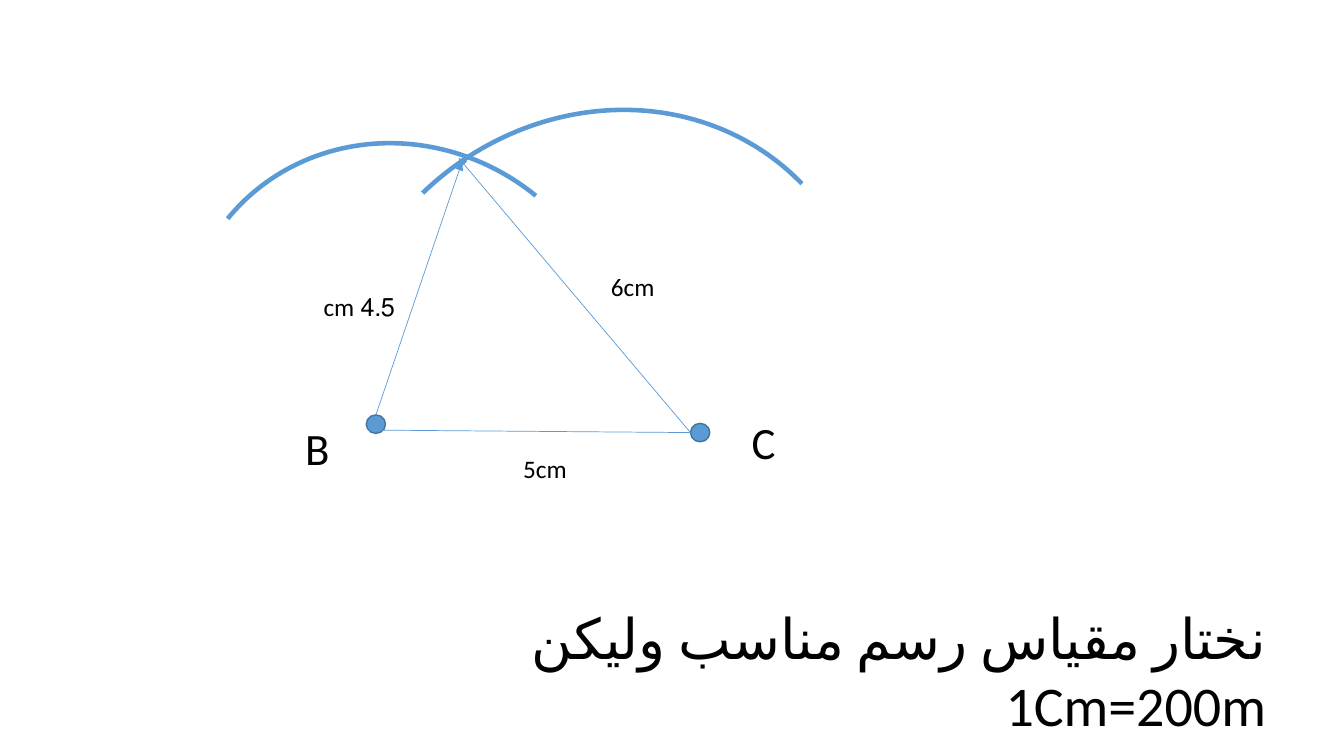
from lxml.etree import SubElement
from pptx import Presentation
from pptx.dml.color import RGBColor
from pptx.enum.lang import MSO_LANGUAGE_ID as Language
from pptx.enum.shapes import MSO_CONNECTOR as Connector, MSO_SHAPE as Shape
from pptx.enum.text import MSO_ANCHOR as Anchor, PP_ALIGN as Align
from pptx.oxml.ns import qn
from pptx.util import Inches, Pt

COLORS = {"stroke": "5B9BD5", "outline": "43739E", "text": "000000"}


class TriangleSlide:
    """Draws a triangle construction on a grid of 16 columns and 9 rows."""

    font_name = "Calibri"

    def __init__(self, presentation):
        self.slide = presentation.slides.add_slide(presentation.slide_layouts[6])
        self.column = presentation.slide_width / 16
        self.row = presentation.slide_height / 9

    def grid(self, *lengths):
        units = (self.column, self.row)
        return [round(length * units[i % 2]) for i, length in enumerate(lengths)]

    def stroke(self, line, color, width):
        line.color.rgb = RGBColor.from_string(COLORS[color])
        line.width = Pt(width)

    def shape(self, kind, left, top, width, height):
        shape = self.slide.shapes.add_shape(kind, *self.grid(left, top, width, height))
        shape.shadow.inherit = False
        return shape

    def dot(self, left, top):
        dot = self.shape(Shape.FLOWCHART_CONNECTOR, left, top, 0.23, 0.22)
        dot.fill.solid()
        dot.fill.fore_color.rgb = RGBColor.from_string(COLORS["stroke"])
        self.stroke(dot.line, "outline", 1)
        return dot

    def arc(self, left, top, width, height, rotation):
        arc = self.shape(Shape.ARC, left, top, width, height)
        arc.rotation = rotation
        arc.fill.background()
        self.stroke(arc.line, "stroke", 3.25)

    def side(self, start, end, arrow=False):
        side = self.slide.shapes.add_connector(
            Connector.STRAIGHT, *self.grid(*start, *end))
        self.stroke(side.line, "stroke", 0.5)
        properties = side.element.spPr
        SubElement(properties, qn("a:effectLst"))
        if arrow:
            SubElement(properties.find(qn("a:ln")), qn("a:tailEnd"), type="triangle")
        return side

    def text(self, words, left, top, width, height, size=18, anchor=Anchor.TOP):
        box = self.slide.shapes.add_textbox(*self.grid(left, top, width, height))
        frame = box.text_frame
        frame.word_wrap = True
        frame.vertical_anchor = anchor
        paragraph = frame.paragraphs[0]
        paragraph.text = words
        paragraph.alignment = Align.RIGHT
        paragraph._p.get_or_add_pPr().set("rtl", "1")
        paragraph.font.name = self.font_name
        paragraph.font.size = Pt(size)
        paragraph.font.color.rgb = RGBColor.from_string(COLORS["text"])
        return paragraph

    def arabic(self, words, left, top, width, height, size):
        run = self.text(words, left, top, width, height, size).runs[0]
        run.font.language_id = Language.ARABIC
        SubElement(run.font._element, qn("a:cs"), typeface=self.font_name)

    def vertex(self, letter, left, top):
        self.text(letter, left, top, 0.38, 1.13, 32, Anchor.BOTTOM)


def main():
    presentation = Presentation()
    presentation.slide_width = Inches(13.33)
    presentation.slide_height = Inches(7.5)
    drawing = TriangleSlide(presentation)

    drawing.dot(8.22, 5.04)
    dot_b = drawing.dot(4.36, 4.94)
    drawing.vertex("C", 8.97, 4.51)
    drawing.vertex("B", 3.66, 4.58)

    side_c = (8.22, 5.15)
    drawing.side(side_c, (4.39, 5.12))
    drawing.text(" 5cm", 4.2, 5.34, 2.74, 0.48)
    drawing.arc(2.25, 1.62, 5.06, 5.34, 309.2)
    drawing.side((4.48, 4.94), (5.5, 1.93), arrow=True).begin_connect(dot_b, 0)
    drawing.arc(3.83, 1.44, 6.65, 6.11, 316)
    drawing.side(side_c, (5.46, 1.88), arrow=True)

    drawing.text("4.5 cm", 3.66, 3.41, 1.16, 0.48)
    drawing.text("6cm", 6.75, 3.17, 1.16, 0.48)
    drawing.arabic("نختار مقياس رسم مناسب وليكن 1Cm=200m",
                   4.71, 7.12, 10.48, 0.92, 40)
    presentation.save("out.pptx")


if __name__ == "__main__":
    main()
